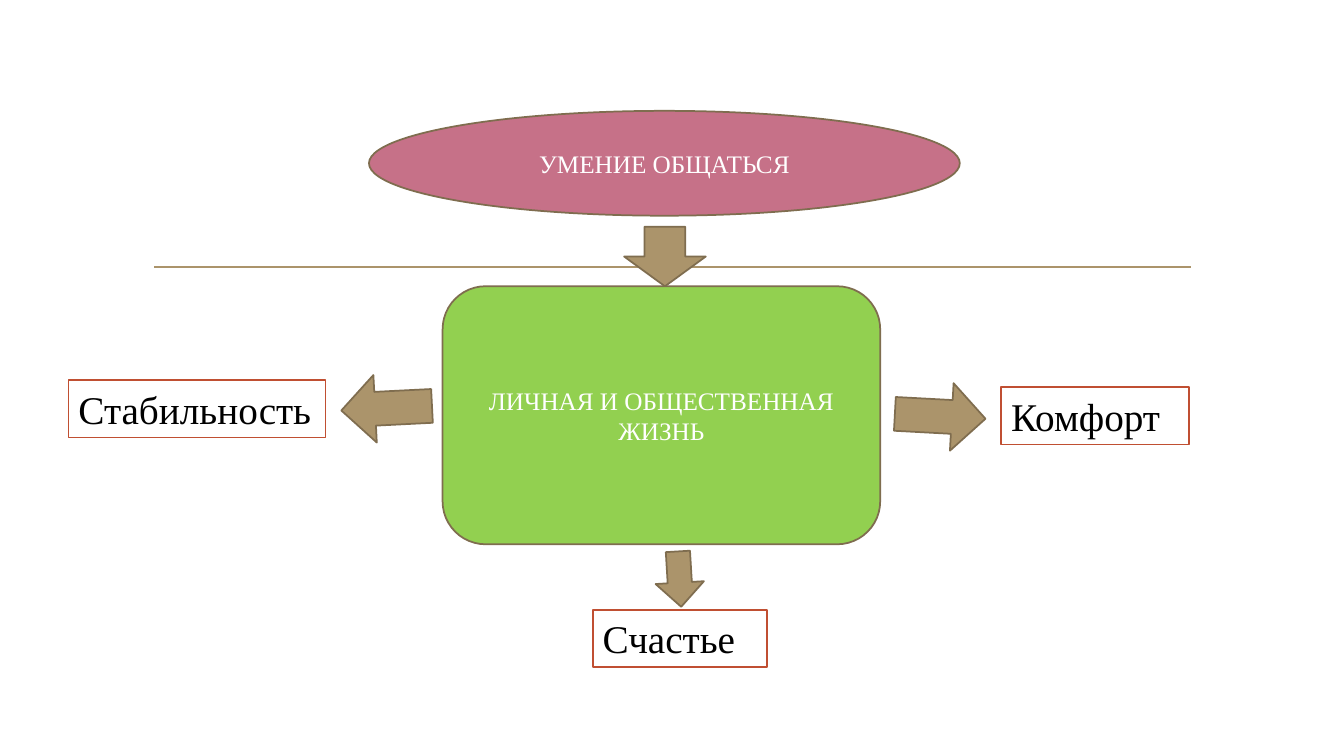
from lxml import etree
from pptx import Presentation
from pptx import util as u
from pptx.dml.color import RGBColor
from pptx.enum import shapes, text
from pptx.oxml.ns import qn

SHAPE = shapes.MSO_SHAPE
WHITE, BLACK = "FFFFFF", "000000"
TAN, BROWN, RUST = "AB946B", "7F6D4F", "C04F32"
ROSE, GREEN = "C67188", "92D050"


def rgb(hex_colour):
    return RGBColor.from_string(hex_colour)


def cells(count):
    """Length of a number of grid cells, each a tenth of an inch."""
    return u.Inches(count / 10)


class Diagram:
    font = "Times New Roman"
    line_width = u.Pt(1.25)

    def __init__(self, slide):
        self.slide = slide

    def outline(self, line, colour):
        line.color.rgb = rgb(colour)
        line.width = self.line_width

    def block(self, kind, box, fill, border):
        block = self.slide.shapes.add_shape(kind, *map(cells, box))
        block.shadow.inherit = False
        block.fill.solid()
        block.fill.fore_color.rgb = rgb(fill)
        self.outline(block.line, border)
        return block

    def label(self, block, words, size, colour, align, anchor):
        frame = block.text_frame
        frame.word_wrap = True
        frame.vertical_anchor = anchor
        paragraph = frame.paragraphs[0]
        paragraph.alignment = align
        run = paragraph.add_run()
        run.text = words
        run.font.name = self.font
        run.font.size = u.Pt(size)
        run.font.color.rgb = rgb(colour)

    def concept(self, kind, box, fill, words):
        block = self.block(kind, box, fill, BROWN)
        self.label(block, words, 18, WHITE, text.PP_ALIGN.CENTER, text.MSO_ANCHOR.MIDDLE)

    def outcome(self, left, top, width, words):
        block = self.block(SHAPE.RECTANGLE, (left, top, width, 5.7), WHITE, RUST)
        self.label(block, words, 28, BLACK, text.PP_ALIGN.LEFT, text.MSO_ANCHOR.TOP)
        block.text_frame.auto_size = text.MSO_AUTO_SIZE.SHAPE_TO_FIT_TEXT

    def arrow(self, box, turn=0):
        """Down arrow, turned clockwise by the given degrees."""
        self.block(SHAPE.DOWN_ARROW, box, TAN, BROWN).rotation = turn

    def rule(self, left, right, row):
        ends = map(cells, (left, row, right, row))
        rule = self.slide.shapes.add_connector(shapes.MSO_CONNECTOR.STRAIGHT, *ends)
        self.outline(rule.line, TAN)
        etree.SubElement(rule._element.spPr, qn("a:effectLst"))


def main():
    deck = Presentation()
    deck.slide_width, deck.slide_height = u.Inches(13.33), u.Inches(7.5)
    diagram = Diagram(deck.slides.add_slide(deck.slide_layouts[6]))

    diagram.rule(15.3, 118.1, 26.5)
    diagram.concept(SHAPE.ROUNDED_RECTANGLE, (43.9, 28.4, 43.4, 25.6), GREEN,
                    "ЛИЧНАЯ И ОБЩЕСТВЕННАЯ ЖИЗНЬ")
    diagram.concept(SHAPE.OVAL, (36.6, 11, 58.6, 10.4), ROSE, "УМЕНИЕ ОБЩАТЬСЯ")

    for box, turn in (
        ((61.9, 22.5, 8.1, 5.9), 0),
        ((35, 36, 6.7, 9), 87.1),
        ((65, 54.7, 4.8, 5.5), 356.6),
        ((89.9, 36.8, 6.7, 9), 273.1),
    ):
        diagram.arrow(box, turn)

    for left, top, width, words in (
        (6.8, 37.7, 25.5, "Стабильность"),
        (99.3, 38.4, 18.6, "Комфорт"),
        (58.8, 60.5, 17.3, "Счастье"),
    ):
        diagram.outcome(left, top, width, words)

    deck.save("out.pptx")


if __name__ == "__main__":
    main()
